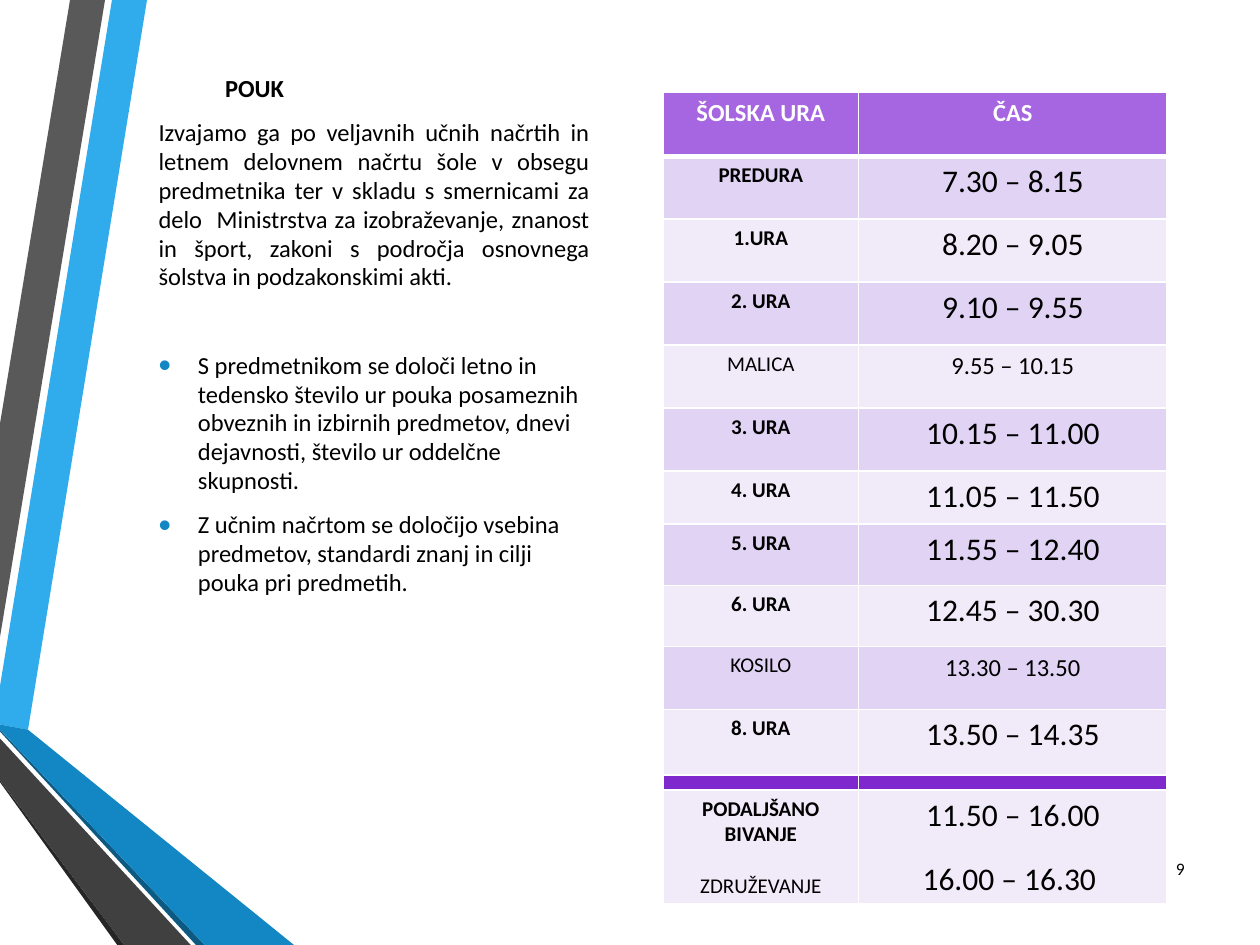
import pptx
import pptx.dml.color
import pptx.enum.text
import pptx.oxml.ns
import pptx.util
from lxml import etree

Pt = pptx.util.Pt
qn = pptx.oxml.ns.qn
ALIGN = pptx.enum.text.PP_ALIGN
ANCHOR = pptx.enum.text.MSO_ANCHOR

COLORS = {
    "text": "000000", "white": "FFFFFF",
    "sky": "30ACEC", "blue": "1287C3", "navy": "0C5A82",
    "grey": "595959", "charcoal": "404040", "black": "262626",
    "header": "A666E1", "band": "E1D3F4", "pale": "F1EAF9", "divider": "7E28CD",
}


class SlideBuilder:
    font = "Calibri"

    def __init__(self, slide):
        self.slide = slide

    def color(self, name):
        return pptx.dml.color.RGBColor.from_string(COLORS[name])

    def ribbon(self, color, points):
        builder = self.slide.shapes.build_freeform(*points[0], scale=Pt(1))
        builder.add_line_segments(points[1:], close=True)
        shape = builder.convert_to_shape()
        shape.fill.solid()
        shape.fill.fore_color.rgb = self.color(color)
        shape.line.fill.background()
        shape.shadow.inherit = False

    def text_box(self, left, top, width, height, anchor):
        box = self.slide.shapes.add_textbox(Pt(left), Pt(top), Pt(width), Pt(height))
        frame = box.text_frame
        frame.word_wrap = True
        frame.vertical_anchor = anchor
        return frame

    def set_text(self, paragraph, text, size, align, bold=False, color="text"):
        paragraph.text = text
        paragraph.alignment = align
        for run in paragraph.runs:
            run.font.name = self.font
            run.font.size = Pt(size)
            run.font.bold = bold
            run.font.color.rgb = self.color(color)

    def space(self, paragraph, before, after=6, line=0.98):
        paragraph.space_before = Pt(before)
        paragraph.space_after = Pt(after)
        paragraph.line_spacing = line

    def indent(self, paragraph, left, first):
        props = paragraph._p.get_or_add_pPr()
        props.set("marL", str(Pt(left)))
        props.set("indent", str(Pt(first)))
        return props

    def bullet(self, paragraph):
        props = self.indent(paragraph, 22.5, -22.5)
        tint = etree.SubElement(props, qn("a:buClr"))
        etree.SubElement(tint, qn("a:srgbClr"), val=COLORS["blue"])
        etree.SubElement(props, qn("a:buSzPct"), val="145000")
        etree.SubElement(props, qn("a:buFont"), typeface="Arial")
        etree.SubElement(props, qn("a:buChar"), char="•")

    def table(self, left, top, widths, heights):
        frame = self.slide.shapes.add_table(
            len(heights), len(widths), Pt(left), Pt(top), Pt(sum(widths)), Pt(sum(heights)))
        table = frame.table
        table.first_row = table.horz_banding = False
        for column, width in zip(table.columns, widths):
            column.width = Pt(width)
        for row, height in zip(table.rows, heights):
            row.height = Pt(height)
        return table

    def style_cell(self, cell, fill, top=1, bottom=1):
        props = cell._tc.get_or_add_tcPr()
        for side, width in (("L", 1), ("R", 1), ("T", top), ("B", bottom)):
            line = etree.SubElement(props, qn(f"a:ln{side}"), w=str(Pt(width)))
            solid = etree.SubElement(line, qn("a:solidFill"))
            etree.SubElement(solid, qn("a:srgbClr"), val=COLORS["white"])
        cell.fill.solid()
        cell.fill.fore_color.rgb = self.color(fill)

    def shrink_empty_cell(self, cell):
        cell.margin_top = cell.margin_bottom = 0
        etree.SubElement(cell.text_frame.paragraphs[0]._p, qn("a:endParaRPr"), sz="100")


RIBBONS = [
    ("sky", [(0, 391.7), (0, 414), (15.8, 416.9), (84.2, 0), (64.1, 0)]),
    ("grey", [(59.8, 0), (39.6, 0), (0, 241.9), (0, 364.3)]),
    ("black", [(0, 445.7), (0, 447.1), (67, 540), (71.3, 540)]),
    ("navy", [(0, 416.9), (0, 417.6), (112.3, 540), (117.4, 540)]),
    ("blue", [(0, 416.9), (117.4, 540), (167.8, 540), (15.8, 416.9), (0, 414)]),
    ("charcoal", [(0, 445.7), (71.3, 540), (108.7, 540), (0, 421.9)]),
]

INTRO = (
    "Izvajamo ga po veljavnih učnih načrtih in letnem delovnem načrtu šole v obsegu "
    "predmetnika ter v skladu s smernicami za delo  Ministrstva za izobraževanje, znanost "
    "in šport, zakoni s področja osnovnega šolstva in podzakonskimi akti."
)
POINTS = [
    "S predmetnikom se določi letno in tedensko število ur pouka posameznih obveznih in "
    "izbirnih predmetov, dnevi dejavnosti, število ur oddelčne skupnosti.",
    "Z učnim načrtom se določijo vsebina predmetov, standardi znanj in cilji pouka pri "
    "predmetih.",
]

# Lesson, time, row height
TIMETABLE = [
    ("ŠOLSKA URA", "ČAS", 36.7),
    ("PREDURA", "7.30 – 8.15", 35.8),
    ("1.URA", "8.20 – 9.05", 36),
    ("2. URA", "9.10 – 9.55", 36),
    ("MALICA", "9.55 – 10.15", 36),
    ("3. URA", "10.15 – 11.00", 36),
    ("4. URA", "11.05 – 11.50", 30.5),
    ("5. URA", "11.55 – 12.40", 35),
    ("6. URA", "12.45 – 30.30", 35),
    ("KOSILO", "13.30 – 13.50", 36),
    ("8. URA", "13.50 – 14.35", 37.5),
    ("", "", 8.5),
    ("PODALJŠANO BIVANJE\nZDRUŽEVANJE", "11.50 – 16.00\n16.00 – 16.30 ", 65),
]
BREAKS = ("MALICA", "KOSILO", "ZDRUŽEVANJE")


def add_timetable(builder):
    table = builder.table(379, 52.6, [111.6, 176.4], [row[2] for row in TIMETABLE])
    for r, (lesson, time, _) in enumerate(TIMETABLE):
        is_header = r == 0
        if is_header:
            fill = "header"
        elif not lesson:
            fill = "divider"
        else:
            fill = "band" if r % 2 else "pale"
        for c, content in enumerate((lesson, time)):
            cell = table.cell(r, c)
            builder.style_cell(cell, fill, top=3 if r == 1 else 1, bottom=3 if is_header else 1)
            if not content:
                builder.shrink_empty_cell(cell)
                continue
            cell.text_frame.text = content
            for i, paragraph in enumerate(cell.text_frame.paragraphs):
                if is_header:
                    size, bold = 14, True
                elif c == 0:
                    size, bold = 12, paragraph.text not in BREAKS
                else:
                    size, bold = 14 if lesson in BREAKS else 18, False
                builder.set_text(paragraph, paragraph.text, size, ALIGN.CENTER, bold,
                                 "white" if is_header else "text")
                if i:
                    paragraph.space_before = Pt(14.6)


def main():
    deck = pptx.Presentation()
    deck.slide_width, deck.slide_height = Pt(720), Pt(540)
    builder = SlideBuilder(deck.slides.add_slide(deck.slide_layouts[6]))

    # Ribbons on the left edge
    for color, points in RIBBONS:
        builder.ribbon(color, points)

    # Lessons: heading, introduction and bullets
    lessons = builder.text_box(83.5, 39, 260.6, 320, ANCHOR.TOP)
    heading = lessons.paragraphs[0]
    builder.set_text(heading, "POUK", 14, ALIGN.LEFT, bold=True)
    builder.space(heading, 0)
    builder.indent(heading, 38, 0)
    intro = lessons.add_paragraph()
    builder.set_text(intro, INTRO, 14, ALIGN.JUSTIFY)
    builder.space(intro, 2.8)
    for before, point in zip((28, 2.8), POINTS):
        item = lessons.add_paragraph()
        builder.set_text(item, point, 14, ALIGN.LEFT)
        builder.space(item, before)
        builder.bullet(item)

    # School timetable
    add_timetable(builder)

    # Page number
    page = builder.text_box(651.6, 481.7, 32.4, 28.8, ANCHOR.MIDDLE)
    builder.set_text(page.paragraphs[0], "9", 10, ALIGN.RIGHT)

    deck.save("out.pptx")


if __name__ == "__main__":
    main()
